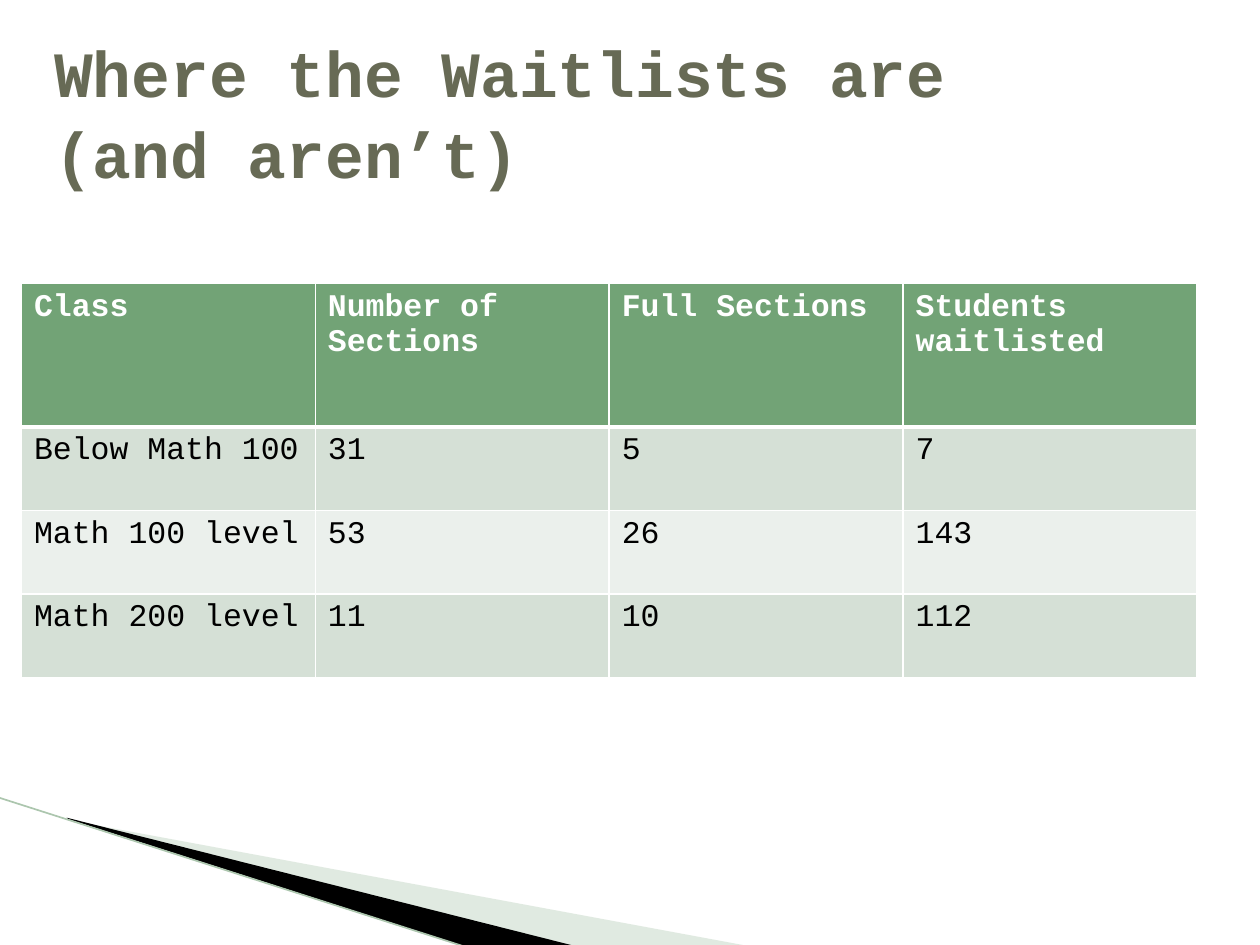
import pptx
import pptx.util
import pptx.dml.color
import pptx.enum.text
import pptx.oxml
from pptx.oxml.ns import nsdecls, qn

Inches, Pt = pptx.util.Inches, pptx.util.Pt
FONT = "Courier New"
COLORS = {
    "title": "676A55", "head": "72A376", "odd": "D5E0D6", "even": "EBF0EC",
    "white": "FFFFFF", "black": "000000", "pale": "B3CBB5", "line": "ACC6AE",
}
ROWS = [
    ["Class", "Number of Sections", "Full Sections", "Students waitlisted"],
    ["Below Math 100", "31", "5", "7"],
    ["Math 100 level", "53", "26", "143"],
    ["Math 200 level", "11", "10", "112"],
]


def color(name):
    return pptx.dml.color.RGBColor.from_string(COLORS[name])


def style(para, size, name, bold):
    font = para.font
    font.name, font.size, font.bold = FONT, Pt(size), bold
    font.color.rgb = color(name)


def add_wedge(slide, left, top, points, name, alpha=None):
    """Draw a filled outline from points relative to left and top."""
    spots = [(Inches(left + x), Inches(top + y)) for x, y in points]
    pen = slide.shapes.build_freeform(*spots[0], scale=1.0)
    pen.add_line_segments(spots[1:], close=True)
    shape = pen.convert_to_shape()
    shape.shadow.inherit = False
    shape.fill.solid()
    shape.fill.fore_color.rgb = color(name)
    shape.line.fill.background()
    if alpha:
        tint = shape.fill._xPr.find(".//" + qn("a:srgbClr"))
        tint.append(pptx.oxml.parse_xml(
            f'<a:alpha {nsdecls("a")} val="{alpha * 1000}"/>'))


def add_corner(slide, left, top):
    add_wedge(slide, left + 0.56, top + 0.17,
              [(0, 0.01), (5.4, 1.01), (4.01, 1.01), (0, 0)], "pale", 40)
    add_wedge(slide, left + 0.54, top + 0.16,
              [(0, 0), (4.04, 1.02), (3.19, 1.03), (0.01, 0.01)], "black")
    edge = slide.shapes.add_connector(
        pptx.enum.shapes.MSO_CONNECTOR.STRAIGHT, Inches(left), Inches(top),
        Inches(left + 3.72), Inches(top + 1.19))
    edge.line.color.rgb = color("line")
    edge.line.width = Pt(0.95)
    edge._element.spPr.append(
        pptx.oxml.parse_xml(f'<a:effectLst {nsdecls("a")}/>'))


def add_borders(cell, top, bottom):
    props = cell._tc.get_or_add_tcPr()
    for side, width in (("L", 1), ("R", 1), ("T", top), ("B", bottom)):
        props.append(pptx.oxml.parse_xml(
            f'<a:ln{side} {nsdecls("a")} w="{Pt(width)}"><a:solidFill>'
            f'<a:srgbClr val="{COLORS["white"]}"/></a:solidFill></a:ln{side}>'))


def add_grid(slide, left, top, width, height):
    table = slide.shapes.add_table(
        len(ROWS), len(ROWS[0]), Inches(left), Inches(top),
        Inches(width), Inches(height)).table
    head = 1.14
    for r, texts in enumerate(ROWS):
        rest = (height - head) / (len(ROWS) - 1)
        table.rows[r].height = Inches(rest if r else head)
        fill = "head" if r == 0 else "odd" if r % 2 else "even"
        for c, text in enumerate(texts):
            cell = table.cell(r, c)
            cell.text = text
            style(cell.text_frame.paragraphs[0], 18,
                  "black" if r else "white", r == 0)
            add_borders(cell, 3 if r == 1 else 1, 3 if r == 0 else 1)
            cell.fill.solid()
            cell.fill.fore_color.rgb = color(fill)


def set_title(slide, left, top, width, height):
    title = slide.shapes.title
    title.left, title.top = Inches(left), Inches(top)
    title.width, title.height = Inches(width), Inches(height)
    frame = title.text_frame
    frame.text = "Where the Waitlists are \v(and aren’t)"
    frame.word_wrap = True
    frame.auto_size = pptx.enum.text.MSO_AUTO_SIZE.NONE
    frame.vertical_anchor = pptx.enum.text.MSO_ANCHOR.MIDDLE
    para = frame.paragraphs[0]
    para.alignment = pptx.enum.text.PP_ALIGN.LEFT
    para.line_spacing = 1.05
    style(para, 36.9, "title", True)


def main():
    deck = pptx.Presentation()
    deck.slide_width, deck.slide_height = Inches(10), Inches(7.5)
    slide = deck.slides.add_slide(deck.slide_layouts.get_by_name("Title Only"))
    add_corner(slide, -0.01, 6.33)
    add_grid(slide, 0.17, 2.25, 9.33, 3.13)
    set_title(slide, 0.33, 0.25, 9, 1.25)
    deck.save("out.pptx")


if __name__ == "__main__":
    main()
